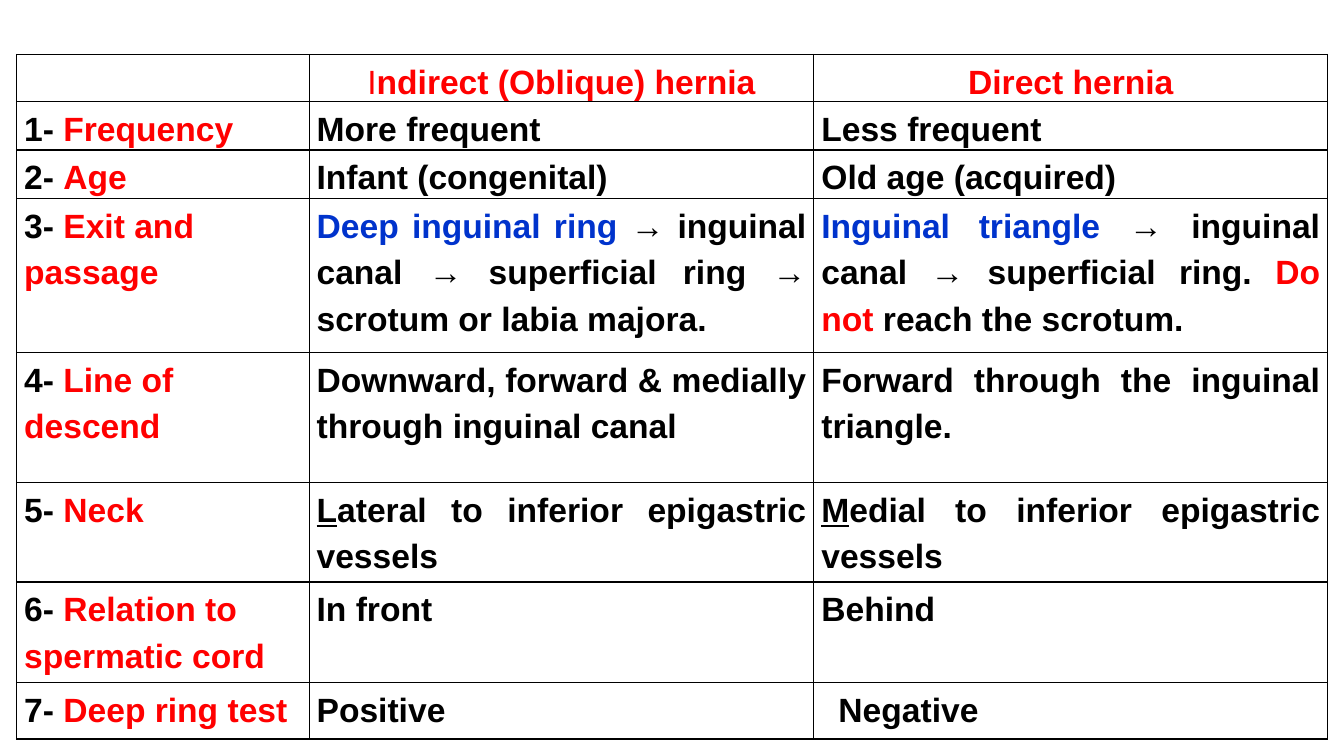
from lxml.etree import SubElement
from pptx import Presentation
from pptx.dml.color import RGBColor
from pptx.enum.text import PP_ALIGN
from pptx.oxml.ns import qn
from pptx.util import Cm, Pt

BLACK = RGBColor(0x00, 0x00, 0x00)
RED = RGBColor(0xFF, 0x00, 0x00)
BLUE = RGBColor(0x00, 0x33, 0xCC)

FONT = {"name": "Arial", "size": Pt(24), "bold": True}
CELL = {"margin_left": Cm(0.19), "margin_right": Cm(0.19), "margin_top": 0, "margin_bottom": 0}
TABLE_FLAGS = {"first_row": False, "horz_banding": False}

COLUMN_WIDTHS = [7.37, 12.72, 12.95]
ROW_HEIGHTS = [1.19, 1.22, 1.22, 3.88, 3.28, 2.51, 2.54, 1.42]
NEGATIVE_INDENT = Cm(0.43)

HEADINGS = [
    [("I", RED, {"bold": False}), ("ndirect (Oblique) hernia", RED, {})],
    [("Direct hernia", RED, {})],
]
FEATURES = [
    ("Frequency", [("More frequent", BLACK, {})], [("Less frequent", BLACK, {})]),
    ("Age", [("Infant (congenital)", BLACK, {})], [("Old age (acquired)", BLACK, {})]),
    ("Exit and passage",
     [("Deep inguinal ring ", BLUE, {}),
      ("→ inguinal canal → superficial ring → scrotum or labia majora.", BLACK, {})],
     [("Inguinal triangle ", BLUE, {}),
      ("→ inguinal canal → superficial ring. ", BLACK, {}),
      ("Do not ", RED, {}),
      ("reach the scrotum.", BLACK, {})]),
    ("Line of descend",
     [("Downward, forward & medially through inguinal canal", BLACK, {})],
     [("Forward through the inguinal triangle.", BLACK, {})]),
    ("Neck",
     [("L", BLACK, {"underline": True}), ("ateral to inferior epigastric vessels", BLACK, {})],
     [("M", BLACK, {"underline": True}), ("edial to inferior epigastric vessels", BLACK, {})]),
    ("Relation to spermatic cord", [("In front", BLACK, {})], [("Behind", BLACK, {})]),
    ("Deep ring test", [("Positive", BLACK, {})], [("Negative", BLACK, {})]),
]


def set_attributes(target, values):
    """Set every named value on the target object."""
    for name, value in values.items():
        setattr(target, name, value)


def add_borders(cell):
    """Draw a thin black line on all four sides of a cell."""
    properties = cell._tc.get_or_add_tcPr()
    for side in ("lnL", "lnR", "lnT", "lnB"):
        line = SubElement(properties, qn(f"a:{side}"), w=str(Pt(1)))
        fill = SubElement(line, qn("a:solidFill"))
        SubElement(fill, qn("a:srgbClr"), val=str(BLACK))


def fill_cell(cell, runs, alignment):
    """Format a cell and write its coloured runs."""
    set_attributes(cell, CELL)
    add_borders(cell)
    cell.fill.background()
    paragraph = cell.text_frame.paragraphs[0]
    set_attributes(paragraph, {"alignment": alignment, "line_spacing": 1.25})
    for text, color, extra in runs:
        run = paragraph.add_run()
        run.text = text
        set_attributes(run.font, FONT | extra)
        run.font.color.rgb = color


def add_comparison_table(slide, left, top, width, height):
    """Place the hernia comparison table in the given box."""
    rows = [[[], *HEADINGS]]
    for number, (feature, indirect, direct) in enumerate(FEATURES, 1):
        rows.append([[(f"{number}- ", BLACK, {}), (feature, RED, {})], indirect, direct])

    frame = slide.shapes.add_table(len(rows), len(COLUMN_WIDTHS), left, top, width, height)
    table = frame.table
    set_attributes(table, TABLE_FLAGS)
    for column, share in zip(table.columns, COLUMN_WIDTHS):
        column.width = int(width * share / sum(COLUMN_WIDTHS))
    for row, share in zip(table.rows, ROW_HEIGHTS):
        row.height = int(height * share / sum(ROW_HEIGHTS))

    for row_index, row in enumerate(rows):
        for column_index, runs in enumerate(row):
            if row_index == 0:
                alignment = PP_ALIGN.CENTER
            elif column_index == 0:
                alignment = PP_ALIGN.LEFT
            else:
                alignment = PP_ALIGN.JUSTIFY
            fill_cell(table.cell(row_index, column_index), runs, alignment)

    negative = table.cell(len(rows) - 1, 2).text_frame.paragraphs[0]
    negative._p.get_or_add_pPr().set("indent", str(NEGATIVE_INDENT))


def main():
    """Build the slide and save the presentation."""
    presentation = Presentation()
    set_attributes(presentation, {"slide_width": Cm(33.87), "slide_height": Cm(19.05)})
    slide = presentation.slides.add_slide(presentation.slide_layouts[6])
    add_comparison_table(slide, Cm(0.42), Cm(1.37), Cm(sum(COLUMN_WIDTHS)), Cm(sum(ROW_HEIGHTS)))
    presentation.save("out.pptx")


if __name__ == "__main__":
    main()
